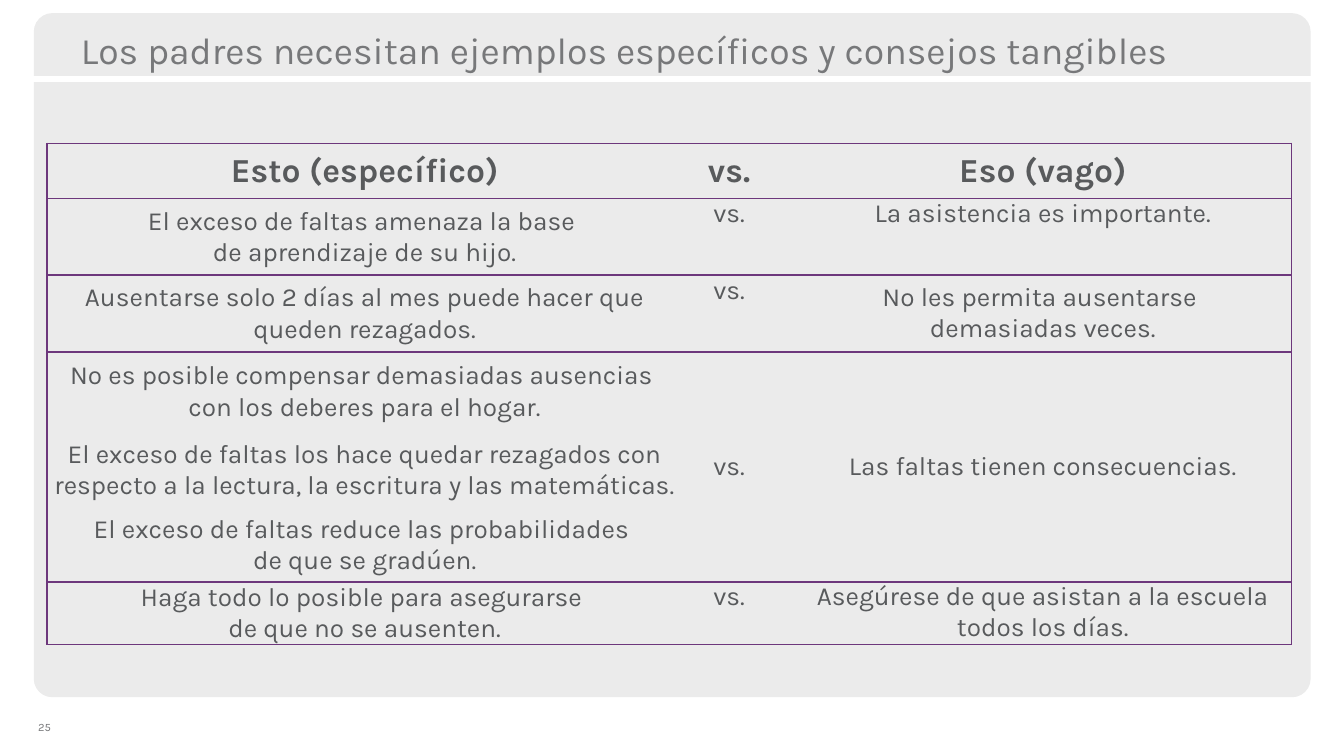
from dataclasses import dataclass
from typing import Any

from lxml import etree
from pptx import Presentation
from pptx.dml.color import RGBColor
from pptx.enum.shapes import MSO_CONNECTOR, MSO_SHAPE
from pptx.enum.text import MSO_ANCHOR, PP_ALIGN
from pptx.oxml.ns import qn
from pptx.util import Cm, Pt

STRAIGHT = MSO_CONNECTOR.STRAIGHT
ROUNDED = MSO_SHAPE.ROUNDED_RECTANGLE
TOP, MIDDLE = MSO_ANCHOR.TOP, MSO_ANCHOR.MIDDLE
LEFT, CENTER = PP_ALIGN.LEFT, PP_ALIGN.CENTER

COLORS = {
    "panel": "EBEBEB",
    "white": "FFFFFF",
    "title": "77787A",
    "body": "585A5C",
    "border": "6D377C",
}

COLUMN_WIDTHS = (12.01, 2.11, 9.4)
ROW_HEIGHTS = (1.04, 1.45, 1.45, 1.5, 1.45, 1.4, 1.16)
RULED_EDGES = {0, 1, 2, 3, 6, 7}
MERGED_ROWS = (3, 5)

ROWS = (
    ("Esto (específico)", "Eso (vago)", MIDDLE, MIDDLE),
    ("El exceso de faltas amenaza la base \nde aprendizaje de su hijo.",
     "La asistencia es importante.", TOP, TOP),
    ("Ausentarse solo 2 días al mes puede hacer que queden rezagados.",
     "No les permita ausentarse \ndemasiadas veces.", TOP, MIDDLE),
    ("No es posible compensar demasiadas ausencias \ncon los deberes para el hogar.",
     "Las faltas tienen consecuencias.", MIDDLE, MIDDLE),
    ("El exceso de faltas los hace quedar rezagados con respecto a la lectura, "
     "la escritura y las matemáticas.", None, MIDDLE, MIDDLE),
    ("El exceso de faltas reduce las probabilidades \nde que se gradúen.",
     None, MIDDLE, MIDDLE),
    ("Haga todo lo posible para asegurarse \nde que no se ausenten.",
     "Asegúrese de que asistan a la escuela todos los días.", TOP, TOP),
)


def apply(target, values):
    for name, value in values.items():
        setattr(target, name, value)


def color(name):
    return RGBColor.from_string(COLORS[name])


@dataclass
class SlideBuilder:
    page: Any
    font: str = "Karla"

    def panel(self, left, top, width, height, radius):
        shape = self.page.shapes.add_shape(
            ROUNDED, Cm(left), Cm(top), Cm(width), Cm(height))
        shape.adjustments[0] = radius / height
        shape.shadow.inherit = False
        shape.fill.solid()
        shape.fill.fore_color.rgb = color("panel")
        shape.line.fill.background()

    def rule(self, left, right, top, width):
        line = self.page.shapes.add_connector(
            STRAIGHT, Cm(left), Cm(top), Cm(right), Cm(top))
        line.line.color.rgb = color("white")
        line.line.width = Pt(width)
        properties = line._element.find(qn("p:spPr"))
        etree.SubElement(properties, qn("a:effectLst"))

    def fill_text(self, frame, text, size, tint, bold=False, **layout):
        para = frame.paragraphs[0]
        para.text = text
        apply(para, layout)
        for span in (para, *para.runs):
            apply(span.font, {"name": self.font, "size": Pt(size), "bold": bold})
            span.font.color.rgb = color(tint)

    def text(self, left, top, width, height, text, size, indent, inset=0, **layout):
        box = self.page.shapes.add_textbox(Cm(left), Cm(top), Cm(width), Cm(height))
        apply(box.text_frame, {
            "word_wrap": True,
            "margin_left": Cm(indent),
            "margin_top": Cm(inset),
            "margin_right": 0,
            "margin_bottom": 0,
        })
        self.fill_text(box.text_frame, text, size, "title", **layout)

    def borders(self, cell, sides):
        properties = cell._tc.get_or_add_tcPr()
        for side, visible in sides.items():
            line = etree.SubElement(properties, qn(f"a:ln{side}"), w=str(Pt(1)))
            if visible:
                fill = etree.SubElement(line, qn("a:solidFill"))
                etree.SubElement(fill, qn("a:srgbClr"), val=COLORS["border"])
            else:
                etree.SubElement(line, qn("a:noFill"))

    def cell(self, cell, row, column, text, anchor):
        apply(cell, {
            "margin_left": 0,
            "margin_top": 0,
            "margin_right": 0,
            "margin_bottom": 0,
            "vertical_anchor": anchor,
        })
        self.borders(cell, {
            "L": column == 0,
            "R": column == len(COLUMN_WIDTHS) - 1,
            "T": row in RULED_EDGES,
            "B": row + cell.span_height in RULED_EDGES,
        })
        cell.fill.solid()
        cell.fill.fore_color.rgb = color("panel")
        if text is None:
            return
        header = row == 0
        layout = {"alignment": CENTER}
        if column == 1:
            layout["alignment"] = LEFT
            cell.margin_left = Cm(0.48 if header else 0.58)
        elif column == 0 and 0 < row < len(ROWS) - 1:
            layout["line_spacing"] = 1.03
        self.fill_text(cell.text_frame, text, 18 if header else 14, "body", header,
                       **layout)

    def comparison(self, left, top):
        table = self.page.shapes.add_table(
            len(ROWS), len(COLUMN_WIDTHS), Cm(left), Cm(top),
            Cm(sum(COLUMN_WIDTHS)), Cm(sum(ROW_HEIGHTS))).table
        apply(table, {"first_row": False, "horz_banding": False})
        for column, width in zip(table.columns, COLUMN_WIDTHS):
            column.width = Cm(width)
        for row, height in zip(table.rows, ROW_HEIGHTS):
            row.height = Cm(height)
        first, last = MERGED_ROWS
        for column in (1, 2):
            table.cell(first, column).merge(table.cell(last, column))
        for row, (specific, vague, versus_anchor, vague_anchor) in enumerate(ROWS):
            versus = "vs." if vague else None
            entries = ((specific, MIDDLE), (versus, versus_anchor), (vague, vague_anchor))
            for column, (text, anchor) in enumerate(entries):
                self.cell(table.cell(row, column), row, column, text, anchor)


def main():
    deck = Presentation()
    apply(deck, {"slide_width": Cm(25.4), "slide_height": Cm(14.29)})
    builder = SlideBuilder(deck.slides.add_slide(deck.slide_layouts[6]))
    builder.panel(0.64, 0.25, 24.13, 12.93, radius=0.35)
    builder.rule(0, 25.4, 1.5, width=3.25)
    builder.text(1.07, 0.38, 23.27, 0.99,
                 "Los padres necesitan ejemplos específicos y consejos tangibles",
                 size=20, indent=0.46, inset=0.13)
    builder.text(0.64, 13.59, 0.41, 0.3, "25", size=6, indent=0.08,
                 line_spacing=Pt(7.8))
    builder.comparison(0.89, 2.71)
    deck.save("out.pptx")


if __name__ == "__main__":
    main()
